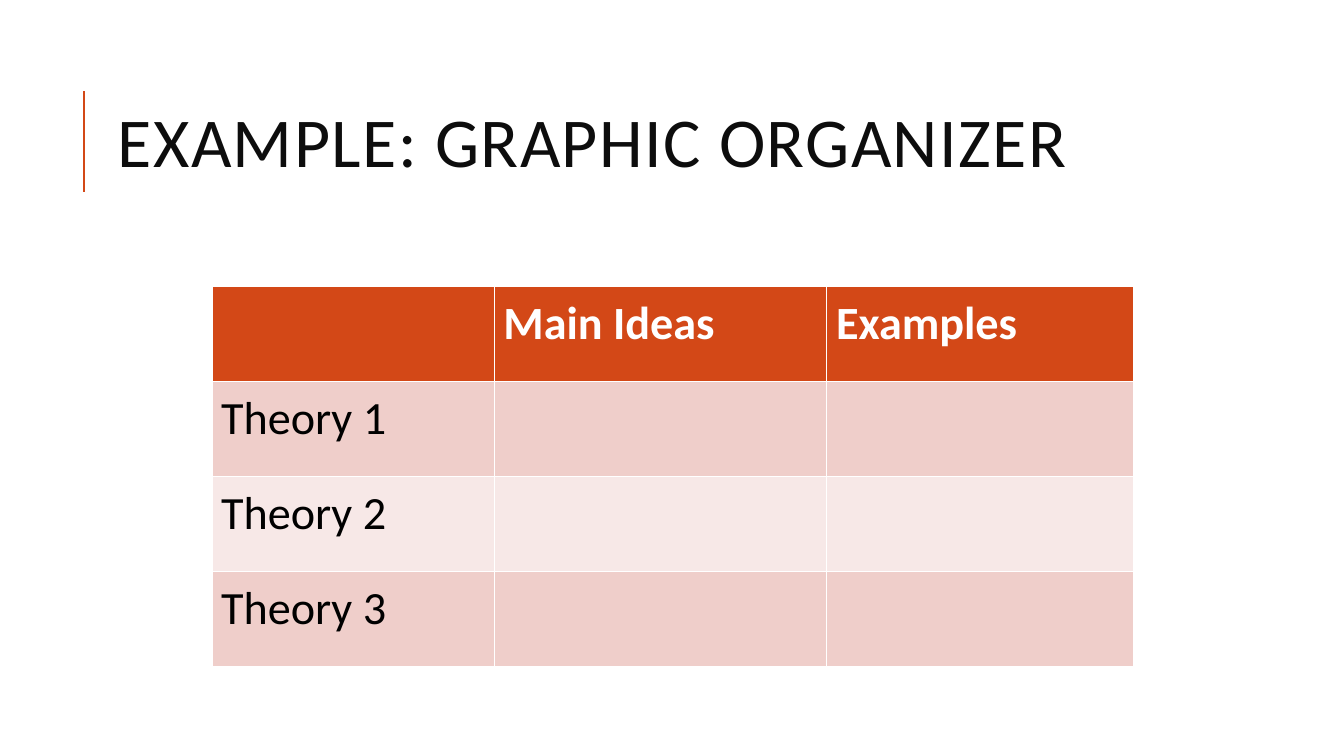
"""Build a slide with a titled graphic organizer table."""
from lxml.etree import SubElement as Sub
from pptx import Presentation
from pptx.dml.color import RGBColor as RGB
from pptx.enum.shapes import MSO_CONNECTOR as Conn
from pptx.enum.text import MSO_ANCHOR as Anchor, MSO_AUTO_SIZE as Fit, PP_ALIGN as Align
from pptx.oxml.ns import qn
from pptx.util import Pt

TITLE = "EXAMPLE: GRAPHIC ORGANIZER"
ROWS = [
    ("", "Main Ideas", "Examples"),
    ("Theory 1", "", ""),
    ("Theory 2", "", ""),
    ("Theory 3", "", ""),
]
COLS = (201.6, 237.6, 218.9)
ROW_H = 67.8
FONT = "Calibri"
COLORS = {
    "accent": "D34817", "title": "0D0D0D", "head": "FFFFFF",
    "body": "000000", "odd": "EFCECA", "even": "F7E8E7",
}


def color(name):
    """Return the named colour."""
    return RGB.from_string(COLORS[name])


def style(para, size, name, bold=False):
    """Set the font of a paragraph."""
    font = para.font
    font.name, font.size, font.bold = FONT, Pt(size), bold
    font.color.rgb = color(name)


def pad(box, size):
    """Give a cell or text frame equal margins."""
    box.margin_left = box.margin_right = Pt(size)
    box.margin_top = box.margin_bottom = Pt(size)


def add_title(slide):
    """Place the title and the rule to its left."""
    rule = slide.shapes.add_connector(Conn.STRAIGHT, Pt(60), Pt(136.8), Pt(60), Pt(64.8))
    rule.line.color.rgb = color("accent")
    rule.line.width = Pt(1.5)
    Sub(rule._element.spPr, qn("a:effectLst"))

    title = slide.shapes.title
    title.left, title.top = Pt(80.6), Pt(46.1)
    title.width, title.height = Pt(765.4), Pt(118.1)
    frame = title.text_frame
    frame.text = TITLE
    frame.word_wrap, frame.auto_size = True, Fit.NONE
    frame.vertical_anchor = Anchor.MIDDLE
    pad(frame, 3.6)
    para = frame.paragraphs[0]
    para.alignment, para.line_spacing = Align.LEFT, 0.8
    style(para, 50, "title")
    para.runs[0]._r.get_or_add_rPr().set("spc", "100")


def add_grid(slide):
    """Place the organizer table."""
    grid = slide.shapes.add_table(
        len(ROWS), len(COLS), Pt(151.4), Pt(204.7),
        Pt(sum(COLS)), Pt(ROW_H * len(ROWS))).table
    for col, width in zip(grid.columns, COLS):
        col.width = Pt(width)
    for r, row in enumerate(ROWS):
        grid.rows[r].height = Pt(ROW_H)
        head = r == 0
        fill = "accent" if head else "odd" if r % 2 else "even"
        for c, text in enumerate(row):
            cell = grid.cell(r, c)
            cell.fill.solid()
            cell.fill.fore_color.rgb = color(fill)
            pad(cell, 6.6)
            cell.text = text
            style(cell.text_frame.paragraphs[0], 33, "head" if head else "body", head)


def main():
    """Build and save the slide."""
    deck = Presentation()
    deck.slide_width, deck.slide_height = Pt(960), Pt(540)
    slide = deck.slides.add_slide(deck.slide_layouts[5])
    add_title(slide)
    add_grid(slide)
    deck.save("out.pptx")


if __name__ == "__main__":
    main()
